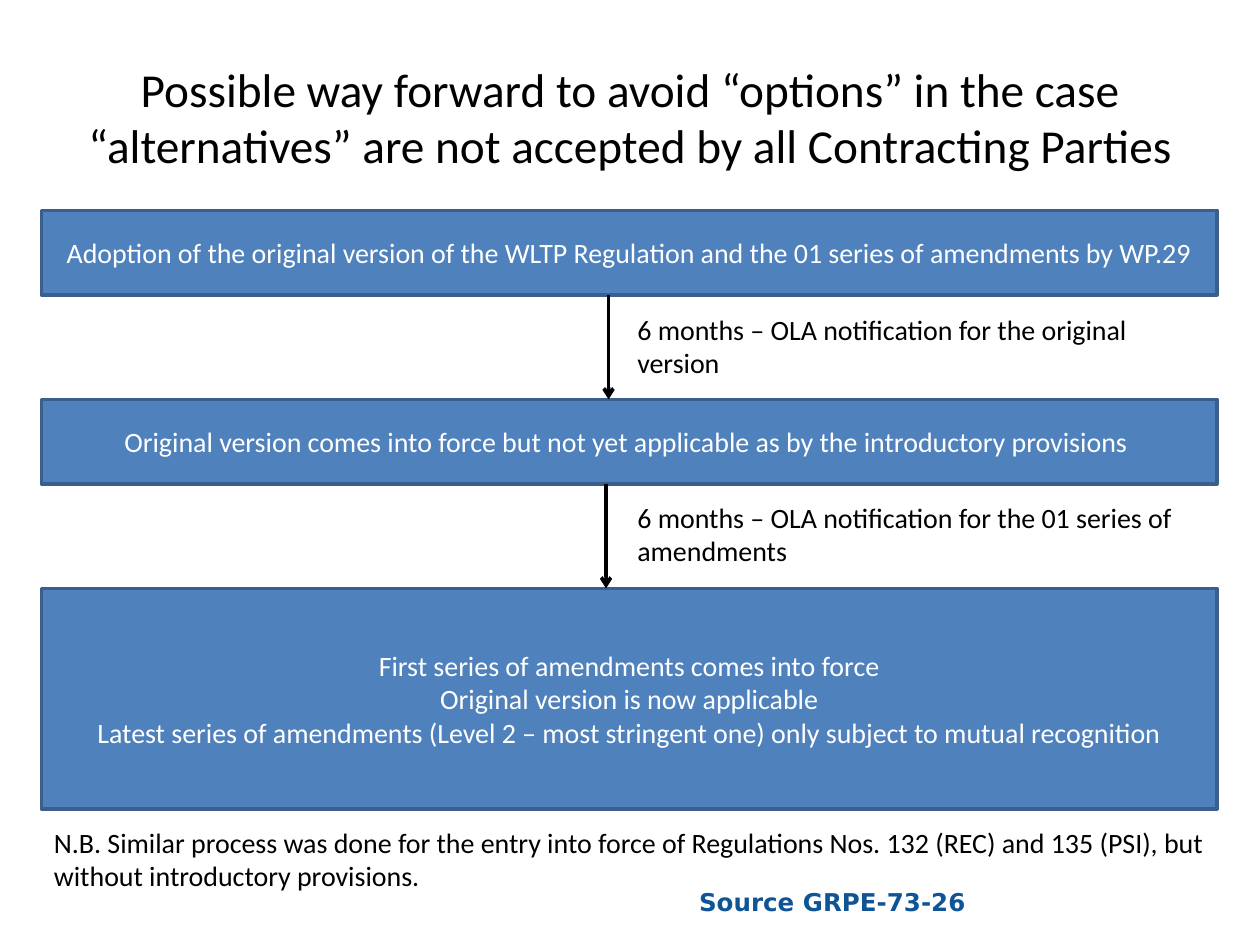
from lxml import etree
from pptx import Presentation
from pptx.dml.color import RGBColor
from pptx.enum.shapes import MSO_CONNECTOR, MSO_SHAPE
from pptx.enum.text import MSO_ANCHOR, PP_ALIGN
from pptx.oxml.ns import qn
from pptx.util import Inches, Pt

RECT = MSO_SHAPE.RECTANGLE
STRAIGHT = MSO_CONNECTOR.STRAIGHT
LEFT, CENTER = PP_ALIGN.LEFT, PP_ALIGN.CENTER
TOP, MIDDLE = MSO_ANCHOR.TOP, MSO_ANCHOR.MIDDLE

BLACK, WHITE = "000000", "FFFFFF"
BOX_FILL, BOX_LINE, SOURCE_BLUE = "4F81BD", "3A5F8C", "0F5494"
MARGIN, WIDTH = 0.33, 9.33

BODY = {"name": "Calibri", "size": Pt(16)}
TITLE = {"name": "Calibri", "size": Pt(27)}
SOURCE = {"name": "DejaVu Sans", "size": Pt(14), "bold": True}

# Step: top, height, lines of text
STEPS = [
    (1.67, 0.67, ["Adoption of the original version of the WLTP Regulation "
                  "and the 01 series of amendments by WP.29"]),
    (3.17, 0.67, ["Original version comes into force but not yet applicable "
                  "as by the introductory provisions "]),
    (4.67, 1.75, ["First series of amendments comes into force",
                  "Original version is now applicable",
                  "Latest series of amendments (Level 2 – most stringent one) "
                  "only subject to mutual recognition"]),
]
# Transition: arrow x, label top, label width, label
TRANSITIONS = [
    (4.83, 2.43, 4.29, "6 months – OLA notification for the original version"),
    (4.81, 3.92, 4.62, "6 months – OLA notification for the 01 series of amendments"),
]


def rgb(value):
    return RGBColor.from_string(value)


def write(tf, lines, style, color, align=LEFT, anchor=TOP):
    tf.word_wrap = True
    tf.vertical_anchor = anchor
    for i, line in enumerate(lines):
        p = tf.paragraphs[0] if i == 0 else tf.add_paragraph()
        p.alignment = align
        r = p.add_run()
        r.text = line
        for key, value in style.items():
            setattr(r.font, key, value)
        r.font.color.rgb = rgb(color)


def add_text(s, box, text, style, color=BLACK, align=LEFT, anchor=TOP):
    sp = s.shapes.add_textbox(*map(Inches, box))
    write(sp.text_frame, [text], style, color, align, anchor)


def add_step(s, box, lines):
    sp = s.shapes.add_shape(RECT, *map(Inches, box))
    sp.shadow.inherit = False
    sp.fill.solid()
    sp.fill.fore_color.rgb = rgb(BOX_FILL)
    sp.line.color.rgb = rgb(BOX_LINE)
    sp.line.width = Pt(2)
    write(sp.text_frame, lines, BODY, WHITE, CENTER, MIDDLE)


def add_arrow(s, x, top, bottom):
    arrow = s.shapes.add_connector(
        STRAIGHT, Inches(x), Inches(top), Inches(x), Inches(bottom))
    arrow.line.color.rgb = rgb(BLACK)
    arrow.line.width = Pt(2)
    etree.SubElement(arrow.line._get_or_add_ln(), qn("a:tailEnd"), type="arrow")
    etree.SubElement(arrow._element.spPr, qn("a:effectLst"))


def add_flow(s, left, width):
    # Steps from top to bottom
    for top, height, lines in STEPS:
        add_step(s, (left, top, width, height), lines)
    # Arrows between neighbouring steps, with their labels
    for upper, lower, transition in zip(STEPS, STEPS[1:], TRANSITIONS):
        x, label_top, label_width, label = transition
        add_arrow(s, x, upper[0] + upper[1], lower[0])
        add_text(s, (4.96, label_top, label_width, 0.64), label, BODY)


def main():
    prs = Presentation()
    prs.slide_width, prs.slide_height = Inches(10), Inches(7.5)
    s = prs.slides.add_slide(prs.slide_layouts[6])

    # Title
    add_text(s, (0.5, 0.3, 9, 1.25),
             "Possible way forward to avoid “options” in the case “alternatives” "
             "are not accepted by all Contracting Parties",
             TITLE, align=CENTER, anchor=MIDDLE)

    add_flow(s, MARGIN, WIDTH)

    # Note and source
    add_text(s, (MARGIN, 6.5, WIDTH, 0.64),
             "N.B. Similar process was done for the entry into force of Regulations "
             "Nos. 132 (REC) and 135 (PSI), but without introductory provisions.", BODY)
    add_text(s, (5.45, 6.99, 4.25, 0.34), "Source GRPE-73-26", SOURCE, SOURCE_BLUE)

    prs.save("out.pptx")


if __name__ == "__main__":
    main()
